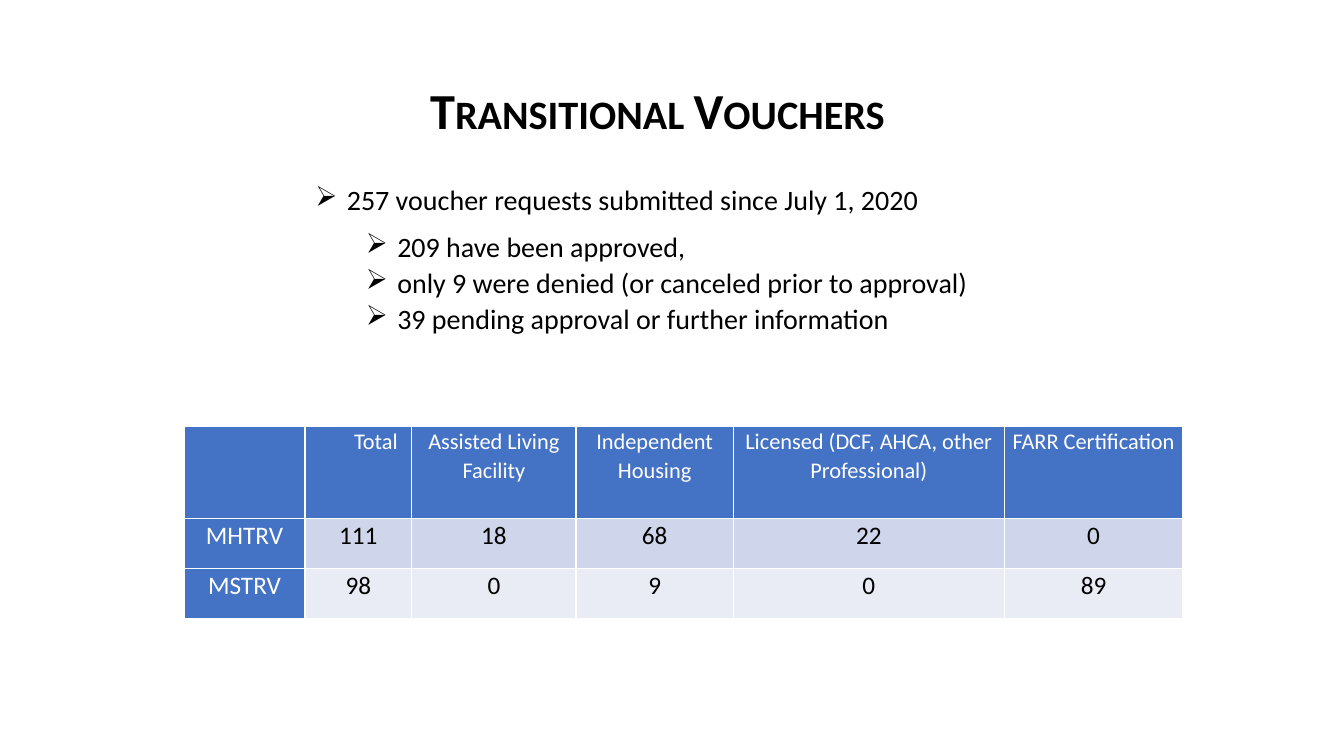
from lxml import etree
from pptx import Presentation
from pptx.dml.color import RGBColor
from pptx.enum import text
from pptx.oxml.ns import qn
from pptx.util import Pt

BLACK = RGBColor(0x00, 0x00, 0x00)
WHITE = RGBColor(0xFF, 0xFF, 0xFF)
BLUE = RGBColor(0x44, 0x72, 0xC4)
BANDS = [RGBColor(0xCF, 0xD5, 0xEA), RGBColor(0xE9, 0xEB, 0xF5)]
FONT = "Calibri"
LINE_SPACING = 1.07

BULLETS = [
    (0, "257 voucher requests submitted since July 1, 2020"),
    (1, "209 have been approved,"),
    (1, "only 9 were denied (or canceled prior to approval)"),
    (1, "39 pending approval or further information"),
]
VOUCHERS = [
    ["", "Total", "Assisted Living Facility", "Independent Housing",
     "Licensed (DCF, AHCA, other Professional)", "FARR Certification"],
    ["MHTRV", "111", "18", "68", "22", "0"],
    ["MSTRV", "98", "0", "9", "0", "89"],
]
COL_WIDTHS = [86.4, 76.3, 117.4, 112.3, 193.7, 127.4]
ROW_HEIGHTS = [65.5, 36, 36]


def style(p, size, color, bold=False):
    for r in p.runs:
        f = r.font
        f.name, f.size, f.bold = FONT, Pt(size), bold
        f.color.rgb = color


def add_box(s, left, top, width, height):
    tf = s.shapes.add_textbox(Pt(left), Pt(top), Pt(width), Pt(height)).text_frame
    tf.word_wrap = True
    return tf


def add_title(s, title):
    p = add_box(s, 300.2, 52.6, 344, 51).paragraphs[0]
    p.text = title
    style(p, 36, BLACK, bold=True)
    p.runs[0].font._element.set("cap", "small")


def add_bullets(s, items):
    tf = add_box(s, 218.2, 125.3, 523.4, 164.9)
    for i, (level, line) in enumerate(items):
        p = tf.add_paragraph() if i else tf.paragraphs[0]
        p.text = line
        p.level = level
        p.line_spacing = LINE_SPACING
        p.space_after = Pt(0 if level else 8)
        style(p, 20, BLACK)
        # Hanging arrow bullet
        pPr = p._p.get_or_add_pPr()
        pPr.set("marL", str(Pt(22.5 + 36 * level)))
        pPr.set("indent", str(Pt(-22.5)))
        etree.SubElement(pPr, qn("a:buChar")).set("char", "➢")


def add_borders(cell):
    tcPr = cell._tc.get_or_add_tcPr()
    for side in ("lnL", "lnR", "lnT", "lnB"):
        ln = etree.SubElement(tcPr, qn(f"a:{side}"), w=str(Pt(1)))
        fill = etree.SubElement(ln, qn("a:solidFill"))
        etree.SubElement(fill, qn("a:srgbClr")).set("val", str(WHITE))


def fill_cell(cell, value, size, color, background):
    add_borders(cell)
    cell.fill.solid()
    cell.fill.fore_color.rgb = background
    cell.margin_left = cell.margin_right = Pt(5)
    cell.margin_top = cell.margin_bottom = Pt(0)
    p = cell.text_frame.paragraphs[0]
    p.text = value
    p.alignment = text.PP_ALIGN.CENTER
    p.line_spacing = LINE_SPACING
    style(p, size, color)


def add_voucher_table(s, rows):
    table = s.shapes.add_table(
        len(rows), len(COL_WIDTHS), Pt(131.4), Pt(304.6),
        Pt(sum(COL_WIDTHS)), Pt(sum(ROW_HEIGHTS))).table
    for col, width in zip(table.columns, COL_WIDTHS):
        col.width = Pt(width)
    for i, values in enumerate(rows):
        table.rows[i].height = Pt(ROW_HEIGHTS[i])
        for j, value in enumerate(values):
            heading = i == 0 or j == 0
            fill_cell(table.cell(i, j), value, 18 if i else 16,
                      WHITE if heading else BLACK,
                      BLUE if heading else BANDS[i - 1])
    # The Total heading sits to the right of its column
    total = table.cell(0, 1)
    total.margin_right = Pt(10)
    total.text_frame.paragraphs[0].alignment = text.PP_ALIGN.RIGHT


def main():
    prs = Presentation()
    prs.slide_width, prs.slide_height = Pt(960), Pt(540)
    s = prs.slides.add_slide(prs.slide_layouts[6])
    add_bullets(s, BULLETS)
    add_title(s, "Transitional Vouchers")
    add_voucher_table(s, VOUCHERS)
    prs.save("out.pptx")


if __name__ == "__main__":
    main()
